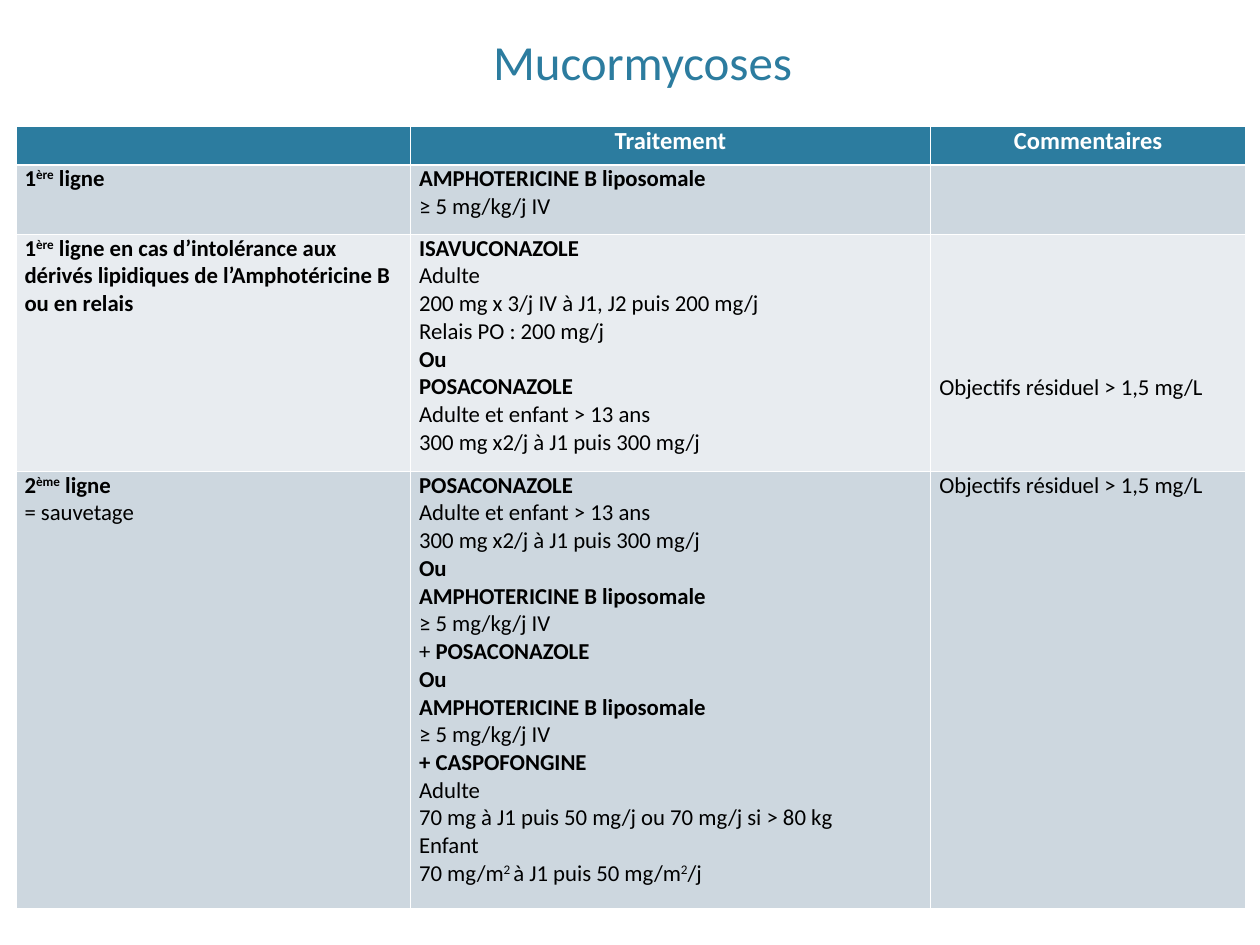
from pptx import Presentation
from pptx.dml.color import RGBColor
from pptx.enum.text import MSO_ANCHOR, PP_ALIGN
from pptx.util import Pt

CENTER, LEFT = PP_ALIGN.CENTER, PP_ALIGN.LEFT
MIDDLE = MSO_ANCHOR.MIDDLE
TEAL, WHITE, BLACK = "2C7C9F", "FFFFFF", "000000"
BAND_DARK, BAND_LIGHT = "CDD7DF", "E8ECF0"


def color(value):
    return RGBColor.from_string(value)


def write(paragraph, markup, size, ink, align):
    """Asterisks enclose bold text, carets enclose superscripts."""
    paragraph.alignment = align
    paragraph.font.name = "Calibri"
    paragraph.font.size = Pt(size)
    paragraph.font.color.rgb = color(ink)
    pieces = [(i % 2 == 1, part) for i, part in enumerate(markup.split("*")) if part]
    weights = {bold for bold, part in pieces}
    if len(weights) == 1:
        paragraph.font.bold = pieces[0][0]
    for bold, part in pieces:
        for i, text in enumerate(part.split("^")):
            if not text:
                continue
            run = paragraph.add_run()
            run.text = text
            if len(weights) > 1:
                run.font.bold = bold
            if i % 2:
                run.font._element.set("baseline", "30000")


prs = Presentation()
prs.slide_width, prs.slide_height = Pt(720), Pt(540)
slide = prs.slides.add_slide(prs.slide_layouts[6])

title = slide.shapes.add_textbox(Pt(14.4), Pt(-2), Pt(705.6), Pt(74)).text_frame
title.word_wrap = True
title.vertical_anchor = MIDDLE
write(title.paragraphs[0], "Mucormycoses", 28, TEAL, CENTER)

amphotericin = ["*AMPHOTERICINE B liposomale*", "≥ 5 mg/kg/j IV"]
posaconazole = ["*POSACONAZOLE*", "Adulte et enfant > 13 ans", "300 mg x2/j à J1 puis 300 mg/j"]
target = ["Objectifs résiduel > 1,5 mg/L"]
either = ["*Ou*"]

isavuconazole = [
    "*ISAVUCONAZOLE*",
    "Adulte",
    "200 mg x 3/j IV à J1, J2 puis 200 mg/j",
    "Relais PO : 200 mg/j",
]
caspofungin = [
    "*+ CASPOFONGINE*",
    "Adulte",
    "70 mg à J1 puis 50 mg/j ou 70 mg/j si > 80 kg",
    "Enfant",
    "70 mg/m^2 ^à J1 puis 50 mg/m^2^/j",
]
intolerance = (
    "*1^ère^ ligne en cas d’intolérance aux dérivés lipidiques "
    "de l’Amphotéricine B ou en relais*"
)
treatments = [
    [[], ["*Traitement*"], ["*Commentaires*"]],
    [["*1^ère^ ligne*"], amphotericin, []],
    [[intolerance], isavuconazole + either + posaconazole, target],
    [
        ["*2^ème^ ligne*", "= sauvetage"],
        posaconazole + either + amphotericin + ["+ *POSACONAZOLE*"]
        + either + amphotericin + caspofungin,
        target,
    ],
]
widths = [225.5, 297.3, 180]
heights = [22.3, 39.8, 135.4, 249.8]
fills = [TEAL, BAND_DARK, BAND_LIGHT, BAND_DARK]

table = slide.shapes.add_table(
    len(heights), len(widths), Pt(9), Pt(72), Pt(sum(widths)), Pt(sum(heights))
).table
for column, width in zip(table.columns, widths):
    column.width = Pt(width)

for r, (height, fill, contents) in enumerate(zip(heights, fills, treatments)):
    table.rows[r].height = Pt(height)
    size, ink, align = (14, WHITE, CENTER) if r == 0 else (13, BLACK, LEFT)
    for c, lines in enumerate(contents):
        cell = table.cell(r, c)
        cell.fill.solid()
        cell.fill.fore_color.rgb = color(fill)
        cell.margin_left = cell.margin_right = Pt(5)
        cell.margin_top = cell.margin_bottom = 0
        for i, line in enumerate(lines):
            frame = cell.text_frame
            paragraph = frame.add_paragraph() if i else frame.paragraphs[0]
            write(paragraph, line, size, ink, align)

lines_above_target = len(isavuconazole + either)
table.cell(2, 2).margin_top = Pt(lines_above_target * 15.86)

prs.save("out.pptx")
